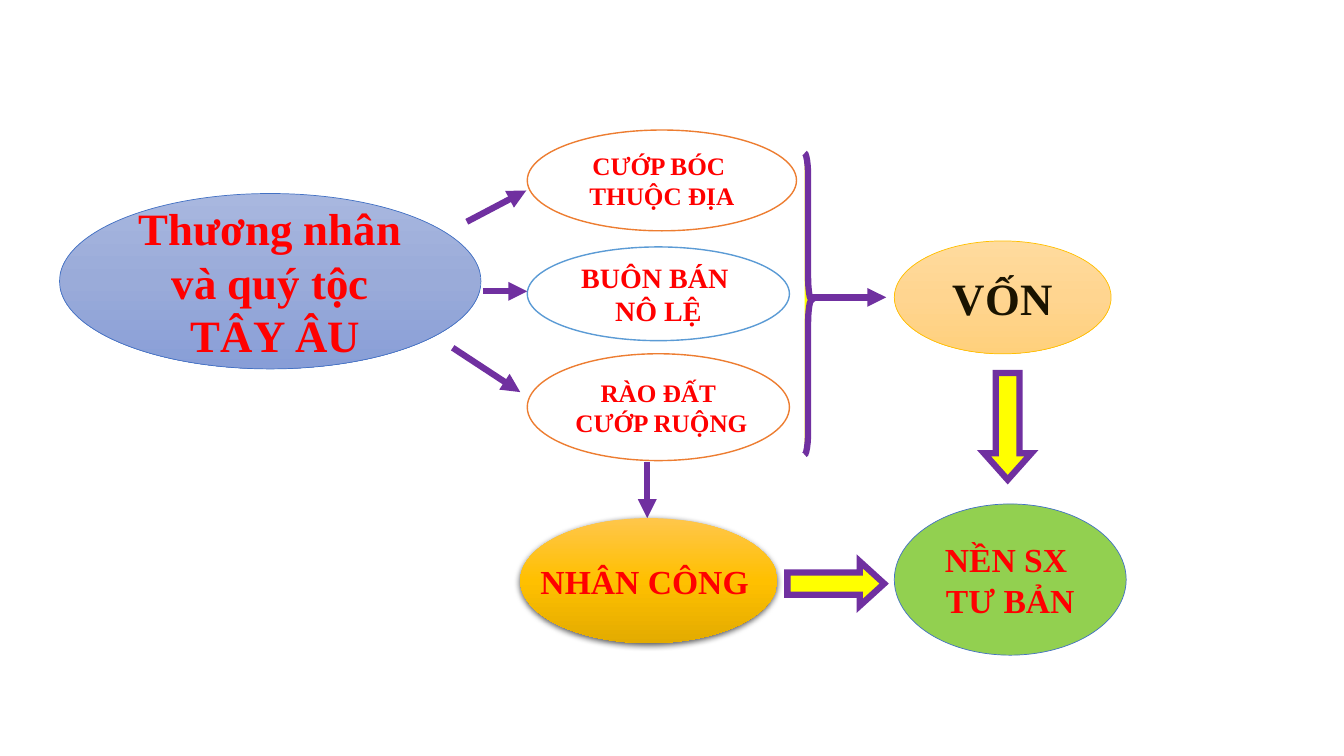
from copy import deepcopy

from lxml import etree
from pptx import Presentation
from pptx.dml.color import RGBColor
from pptx.enum.shapes import MSO_CONNECTOR, MSO_SHAPE
from pptx.enum.text import MSO_ANCHOR, PP_ALIGN
from pptx.oxml.ns import qn
from pptx.util import Inches, Pt

ELLIPSE = MSO_SHAPE.OVAL
BRACE = MSO_SHAPE.RIGHT_BRACE
DOWN, RIGHT = MSO_SHAPE.DOWN_ARROW, MSO_SHAPE.RIGHT_ARROW
STRAIGHT = MSO_CONNECTOR.STRAIGHT
MIDDLE, CENTER = MSO_ANCHOR.MIDDLE, PP_ALIGN.CENTER

FONT = "Times New Roman"
RED, PURPLE, YELLOW, WHITE = "FF0000", "7030A0", "FFFF00", "FFFFFF"
BLUE, ORANGE = "4472C4", "ED7D31"
HEAVY = 4.5


def rgb(value):
    return RGBColor.from_string(value)


def add_xml(parent, tag, **attributes):
    return etree.SubElement(parent, qn(tag), attributes)


def paint(shape, colors):
    """Fill with one colour, or with evenly spaced stops from top to bottom."""
    if isinstance(colors, str):
        shape.fill.solid()
        shape.fill.fore_color.rgb = rgb(colors)
        return
    shape.fill.gradient()
    shape.fill.gradient_angle = 270
    stop_list = shape._element.spPr.find(".//" + qn("a:gsLst"))
    while len(stop_list) < len(colors):
        stop_list.append(deepcopy(stop_list[0]))
    for index, (stop, color) in enumerate(zip(shape.fill.gradient_stops, colors)):
        stop.color.rgb = rgb(color)
        stop.position = index / (len(colors) - 1)


def add_figure(page, kind, box, fill, line=None, width=HEAVY, adjustments=()):
    shape = page.shapes.add_shape(kind, *map(Inches, box))
    shape.shadow.inherit = False
    for index, value in enumerate(adjustments):
        shape.adjustments[index] = value
    paint(shape, fill)
    if line is None:
        shape.line.fill.background()
    else:
        shape.line.color.rgb = rgb(line)
        shape.line.width = Pt(width)
        add_xml(shape._element.spPr.find(qn("a:ln")), "a:miter", lim="800000")
    return shape


def add_bubble(page, box, lines, size, fill, line=None, width=0.5, color=RED):
    shape = add_figure(page, ELLIPSE, box, fill, line, width)
    frame = shape.text_frame
    frame.word_wrap = False
    frame.vertical_anchor = MIDDLE
    frame.text = "\n".join(lines)
    for para in frame.paragraphs:
        para.alignment = CENTER
        para.font.name = FONT
        para.font.size = Pt(size)
        para.font.bold = True
        para.font.color.rgb = rgb(color)
    return shape


def add_arrow(page, start, end):
    arrow = page.shapes.add_connector(STRAIGHT, *map(Inches, start + end))
    arrow.line.color.rgb = rgb(PURPLE)
    arrow.line.width = Pt(HEAVY)
    properties = arrow._element.spPr
    add_xml(properties.find(qn("a:ln")), "a:tailEnd", type="triangle")
    add_xml(properties, "a:effectLst")


def add_soft_shadow(shape):
    effects = shape._element.spPr.find(qn("a:effectLst"))
    shadow = add_xml(effects, "a:outerShdw", blurRad=str(Pt(4.5)), dist=str(Pt(1.5)),
                     dir="5400000", algn="ctr", rotWithShape="0")
    color = add_xml(shadow, "a:srgbClr", val="000000")
    add_xml(color, "a:alpha", val="63000")


def add_sources(page):
    """Merchants and nobles, and their three ways to wealth."""
    add_bubble(page, (0.59, 1.92, 4.18, 1.74), ["Thương nhân", "và quý tộc", " TÂY ÂU"],
               32, ("A8B7DF", "9AABD9", "889ED7"), BLUE)
    left = 5.23
    methods = [
        (1.29, 2.67, 1.0, ["CƯỚP BÓC ", "THUỘC ĐỊA"], 18, ORANGE),
        (2.45, 2.6, 0.93, ["BUÔN BÁN ", "NÔ LỆ"], 20, "5B9BD5"),
        (3.51, 2.6, 1.06, ["RÀO ĐẤT", " CƯỚP RUỘNG"], 18, ORANGE),
    ]
    for top, width, height, lines, size, line in methods:
        add_bubble(page, (left, top, width, height), lines, size, WHITE, line, 1)
    add_arrow(page, (4.63, 2.2), (5.22, 1.89))
    add_arrow(page, (4.79, 2.89), (left, 2.89))
    add_arrow(page, (4.49, 3.45), (5.16, 3.89))


def add_labour(page):
    """Workers, below the enclosure of land."""
    add_arrow(page, (6.42, 4.58), (6.42, 5.14))
    workers = add_bubble(page, (5.16, 5.14, 2.55, 1.24), ["NHÂN CÔNG "], 24,
                         ("FFC64B", "FFC000", "E3AB00"))
    add_soft_shadow(workers)


def add_capital(page):
    """Brace that gathers the three ways into capital."""
    add_figure(page, BRACE, (7.98, 1.52, 0.07, 2.99), YELLOW, PURPLE,
               adjustments=(3.335, 0.487))
    add_arrow(page, (8.05, 2.95), (8.79, 2.95))
    add_bubble(page, (8.87, 2.39, 2.15, 1.12), ["VỐN"], 32,
               ("FFDB9E", "FFD590", "FFD07C"), "FFC000", color="1A1300")


def add_outcome(page):
    """Capital and workers lead to capitalist production."""
    add_figure(page, DOWN, (9.76, 3.7, 0.47, 1.06), YELLOW, PURPLE,
               adjustments=(0.5, 0.56))
    add_figure(page, RIGHT, (7.81, 5.57, 0.96, 0.44), YELLOW, PURPLE,
               adjustments=(0.5, 0.55))
    add_bubble(page, (8.87, 5, 2.3, 1.5), ["NỀN SX ", "TƯ BẢN"], 24, "92D050", BLUE)


def main():
    deck = Presentation()
    deck.slide_width, deck.slide_height = Inches(13.33), Inches(7.5)
    page = deck.slides.add_slide(deck.slide_layouts[6])
    add_sources(page)
    add_labour(page)
    add_capital(page)
    add_outcome(page)
    deck.save("out.pptx")


if __name__ == "__main__":
    main()
